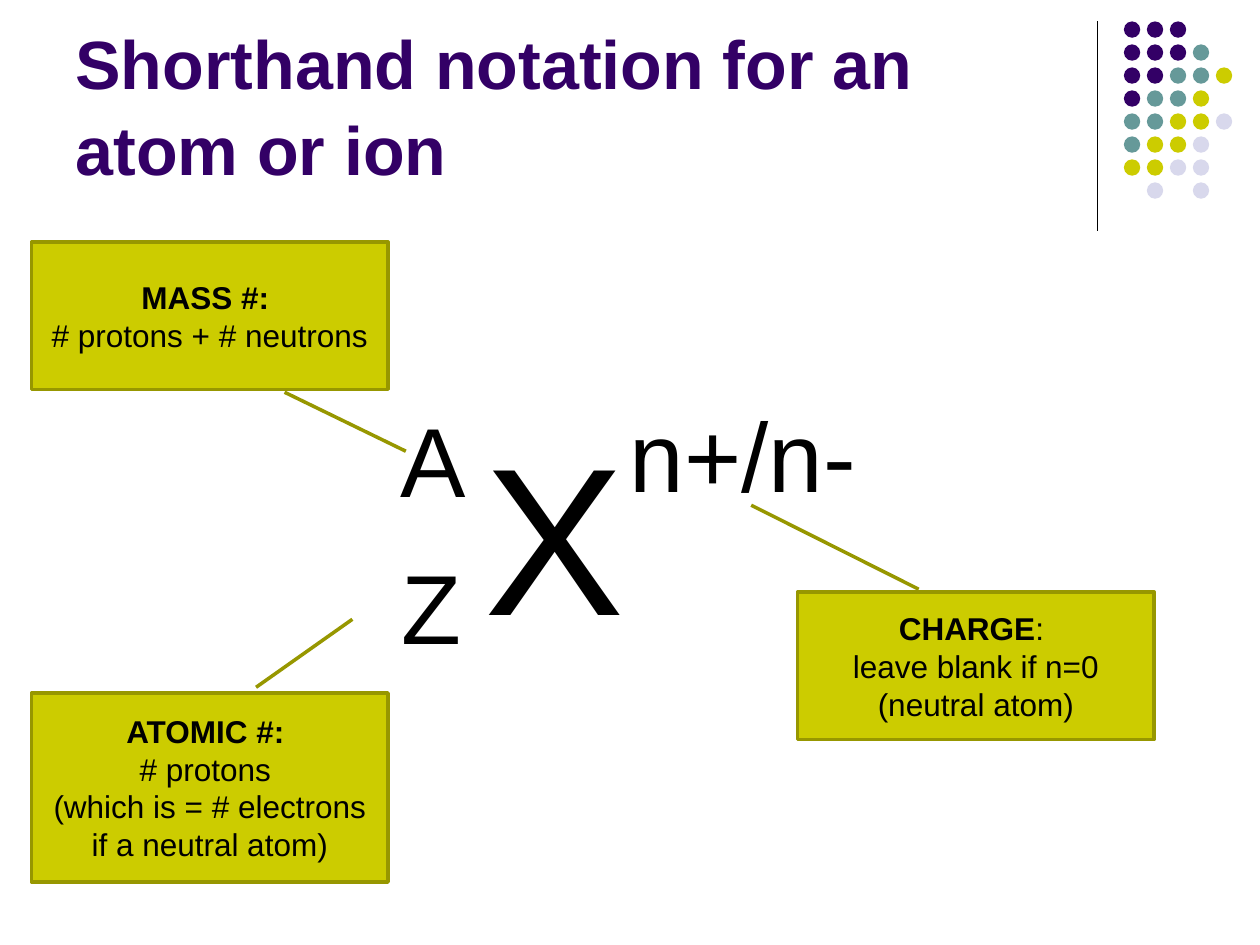
from dataclasses import dataclass

from lxml.etree import SubElement
from pptx import Presentation
from pptx.dml.color import RGBColor
from pptx.enum.shapes import MSO_CONNECTOR, MSO_SHAPE
from pptx.enum.text import MSO_ANCHOR, MSO_AUTO_SIZE, PP_ALIGN
from pptx.oxml.ns import qn
from pptx.slide import Slide
from pptx.util import Inches, Pt

PURPLE, TEAL, OLIVE, LAVENDER = "330066", "669999", "CCCC00", "D8D8EC"
BLACK, DARK_OLIVE = "000000", "979700"
DOT_COLOURS = {"P": PURPLE, "T": TEAL, "O": OLIVE, "L": LAVENDER}
DOT_ROWS = ("PPP", "PPPT", "PPTTO", "PTTO", "TTOOL", "TOOL", "OOLL", " L L")
DOT_LEFT, DOT_TOP, DOT_SIZE, DOT_PITCH = 8.92, 0.17, 0.13, 0.73 / 4


@dataclass
class Label:
    text: str
    left: float
    top: float
    width: float
    height: float
    size: int = 56


@dataclass
class Callout:
    heading: str
    after_heading: str
    lines: tuple[str, ...]
    left: float
    top: float
    height: float
    pointer: tuple[float, float, float, float]


LABELS = (
    Label("X", 3.75, 3.17, 1.32, 2.12, 120),
    Label("A", 3.08, 3.12, 0.73, 1.04),
    Label("Z", 3.09, 4.29, 0.68, 1.04),
    Label("n+/n-", 4.9, 3.08, 2.01, 1.04),
)
CALLOUTS = (
    Callout("MASS #: ", "", ("# protons + # neutrons",),
            0.25, 1.92, 1.17, (1.02, 0.71, 1.42, 1.05)),
    Callout("ATOMIC #: ", "", ("# protons ", "(which is = # electrons if a neutral atom)"),
            0.25, 5.5, 1.5, (-0.03, 0.63, -0.39, 0.9)),
    Callout("CHARGE", ": ", ("leave blank if n=0 (neutral atom)",),
            6.33, 4.7, 1.17, (-0.59, -0.13, -0.02, 0.34)),
)


def colour(value: str) -> RGBColor:
    """Turn a hex string into a colour."""
    return RGBColor.from_string(value)


def style_span(span, size: int, ink: str = BLACK, bold: bool = False) -> None:
    """Set the font of one run."""
    span.font.name = "Arial"
    span.font.size = Pt(size)
    span.font.bold = bold
    span.font.color.rgb = colour(ink)


def draw_divider(page: Slide) -> None:
    """Draw the thin upright rule beside the dots."""
    rule = page.shapes.add_connector(
        MSO_CONNECTOR.STRAIGHT, Inches(8.71), Inches(0.17), Inches(8.71), Inches(1.83))
    rule.line.color.rgb = colour(BLACK)
    rule.line.width = Pt(0.75)
    SubElement(rule._element.spPr, qn("a:effectLst"))


def draw_dots(page: Slide) -> None:
    """Draw the corner ornament from its rows of colour letters."""
    for row, letters in enumerate(DOT_ROWS):
        for column, letter in enumerate(letters):
            if letter not in DOT_COLOURS:
                continue
            dot = page.shapes.add_shape(
                MSO_SHAPE.OVAL, Inches(DOT_LEFT + column * DOT_PITCH),
                Inches(DOT_TOP + row * DOT_PITCH), Inches(DOT_SIZE), Inches(DOT_SIZE))
            dot.shadow.inherit = False
            dot.fill.solid()
            dot.fill.fore_color.rgb = colour(DOT_COLOURS[letter])
            dot.line.fill.background()


def draw_title(page: Slide) -> None:
    """Write the slide heading."""
    box = page.shapes.add_textbox(Inches(0.5), Inches(0.13), Inches(8.25), Inches(1.42))
    frame = box.text_frame
    frame.word_wrap = True
    frame.vertical_anchor = MSO_ANCHOR.BOTTOM
    frame.text = "Shorthand notation for an atom or ion"
    para = frame.paragraphs[0]
    para.line_spacing = 1.05
    style_span(para.runs[0], 39, PURPLE, True)


def draw_label(page: Slide, label: Label) -> None:
    """Write one part of the atom symbol."""
    box = page.shapes.add_textbox(
        Inches(label.left), Inches(label.top), Inches(label.width), Inches(label.height))
    frame = box.text_frame
    frame.word_wrap = False
    frame.auto_size = MSO_AUTO_SIZE.SHAPE_TO_FIT_TEXT
    frame.text = label.text
    style_span(frame.paragraphs[0].runs[0], label.size)


def draw_callout(page: Slide, callout: Callout) -> None:
    """Draw an explanation box with its pointer line."""
    box = page.shapes.add_shape(
        MSO_SHAPE.LINE_CALLOUT_1, Inches(callout.left), Inches(callout.top),
        Inches(2.83), Inches(callout.height))
    for index, value in enumerate(callout.pointer):
        box.adjustments[index] = value
    box.shadow.inherit = False
    box.fill.solid()
    box.fill.fore_color.rgb = colour(OLIVE)
    box.line.color.rgb = colour(DARK_OLIVE)
    box.line.width = Pt(2)
    frame = box.text_frame
    frame.word_wrap = True
    frame.vertical_anchor = MSO_ANCHOR.MIDDLE
    para = frame.paragraphs[0]
    para.alignment = PP_ALIGN.CENTER
    para.text = callout.heading
    if callout.after_heading:
        para.add_run().text = callout.after_heading
    for line in callout.lines:
        para.add_line_break()
        para.add_run().text = line
    for index, span in enumerate(para.runs):
        style_span(span, 18, bold=index == 0)


def main() -> None:
    """Build and save the slide."""
    deck = Presentation()
    deck.slide_width, deck.slide_height = Inches(10), Inches(7.5)
    page = deck.slides.add_slide(deck.slide_layouts[6])
    draw_divider(page)
    draw_dots(page)
    draw_title(page)
    for label in LABELS:
        draw_label(page, label)
    for callout in CALLOUTS:
        draw_callout(page, callout)
    deck.save("out.pptx")


if __name__ == "__main__":
    main()
